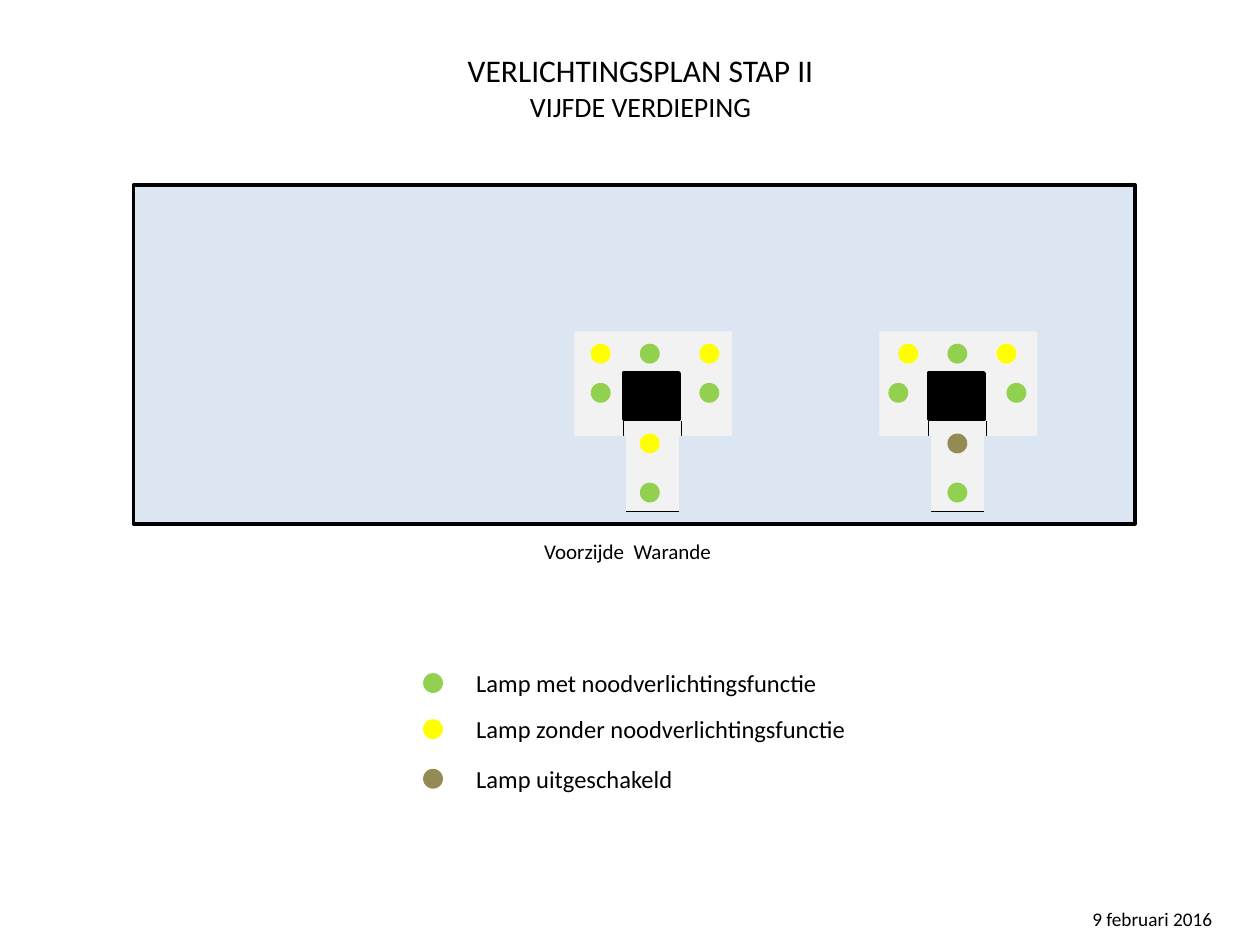
from dataclasses import dataclass
from lxml.etree import SubElement
from pptx import Presentation
from pptx.dml.color import RGBColor as RGB
from pptx.enum.shapes import MSO_CONNECTOR as CONN, MSO_SHAPE as SHAPE
from pptx.enum.text import PP_ALIGN as ALIGN
from pptx.oxml.ns import qn
from pptx.util import Cm, Pt


@dataclass(frozen=True)
class Theme:
    font: str = "Calibri"
    ink: str = "000000"
    floor: str = "DCE6F2"
    stair: str = "F2F2F2"
    emergency: str = "92D050"
    normal: str = "FFFF00"
    off: str = "948A54"
    title: int = 18
    subtitle: int = 16
    legend: int = 14
    caption: int = 12
    date: int = 11
    wall: float = 2
    thin: float = 0.75


T = Theme()
LAMP = 0.4
FLOOR = (2.69, 3.73, 20.19, 6.83)
STAIR_TOP = 6.68
STAIR_LEFTS = (11.58, 17.73)
CORE = (0.99, 0.84, 1.12, 0.94)
RAILS = [(2.16, 1.8, 2.16, 3.63), (0.99, 1.8, 0.99, 3.63), (0.99, 3.63, 2.16, 3.63)]
SIDES = [(-0.08, 2.11, 1.12, 1.65), (2.11, 2.11, 1.12, 1.65)]

LAMP_ROWS = [
    (6.93, [(11.91, T.normal), (12.9, T.emergency), (14.1, T.normal),
            (18.11, T.normal), (19.1, T.emergency), (20.09, T.normal)]),
    (7.72, [(11.91, T.emergency), (14.1, T.emergency),
            (17.91, T.emergency), (20.29, T.emergency)]),
    (8.74, [(12.9, T.normal), (19.1, T.off)]),
    (9.73, [(12.9, T.emergency), (19.1, T.emergency)]),
]
LEGEND = [
    (13.34, "Lamp met noodverlichtingsfunctie", T.emergency),
    (14.27, "Lamp zonder noodverlichtingsfunctie", T.normal),
    (15.27, "Lamp uitgeschakeld", T.off),
]
TEXTS = [
    ((8.1, 0.91, 9.63, 1.7), ALIGN.CENTER,
     [("VERLICHTINGSPLAN STAP II", T.title), ("VIJFDE VERDIEPING", T.subtitle)]),
    ((10.72, 10.74, 5.79, 0.76), ALIGN.LEFT, [("Voorzijde  Warande", T.caption)]),
    ((21.77, 18.16, 3.5, 0.74), ALIGN.LEFT, [("9 februari 2016", T.date)]),
]


def add_block(s, kind, box, fill, line=None):
    sp = s.shapes.add_shape(kind, *map(Cm, box))
    sp.shadow.inherit = False
    sp.fill.solid()
    sp.fill.fore_color.rgb = RGB.from_string(fill)
    if line:
        sp.line.color.rgb = RGB.from_string(T.ink)
        sp.line.width = Pt(line)
    else:
        sp.line.fill.background()


def add_rail(s, ends):
    c = s.shapes.add_connector(CONN.STRAIGHT, *map(Cm, ends))
    c.line.color.rgb = RGB.from_string(T.ink)
    c.line.width = Pt(T.thin)
    SubElement(c.element.spPr, qn("a:effectLst"))


def add_text(s, box, align, lines):
    tf = s.shapes.add_textbox(*map(Cm, box)).text_frame
    tf.word_wrap = True
    for i, (text, size) in enumerate(lines):
        p = tf.add_paragraph() if i else tf.paragraphs[0]
        p.text, p.alignment = text, align
        p.font.name, p.font.size = T.font, Pt(size)
        p.font.color.rgb = RGB.from_string(T.ink)


def add_stair(s, left):
    def place(box):
        x, y, w, h = box
        return left + x, STAIR_TOP + y, w, h

    add_block(s, SHAPE.RECTANGLE, place((0, 0, 3.18, 3.63)), T.stair)
    add_block(s, SHAPE.RECTANGLE, place(CORE), T.ink, T.wall)
    for x1, y1, x2, y2 in RAILS:
        add_rail(s, (left + x1, STAIR_TOP + y1, left + x2, STAIR_TOP + y2))
    for side in SIDES:
        add_block(s, SHAPE.RECTANGLE, place(side), T.floor)


def main():
    """Build the lighting plan slide."""
    prs = Presentation()
    prs.slide_width, prs.slide_height = Cm(25.4), Cm(19.05)
    s = prs.slides.add_slide(prs.slide_layouts[6])
    add_block(s, SHAPE.RECTANGLE, FLOOR, T.floor, T.wall)
    for left in STAIR_LEFTS:
        add_stair(s, left)
    for y, lamps in LAMP_ROWS:
        for x, color in lamps:
            add_block(s, SHAPE.OVAL, (x, y, LAMP, LAMP), color)
    for y, label, color in LEGEND:
        add_block(s, SHAPE.OVAL, (8.53, y + 0.23, LAMP, LAMP), color)
        add_text(s, (9.35, y, 8.53, 0.86), ALIGN.LEFT, [(label, T.legend)])
    for box, align, lines in TEXTS:
        add_text(s, box, align, lines)
    prs.save("out.pptx")


if __name__ == "__main__":
    main()
